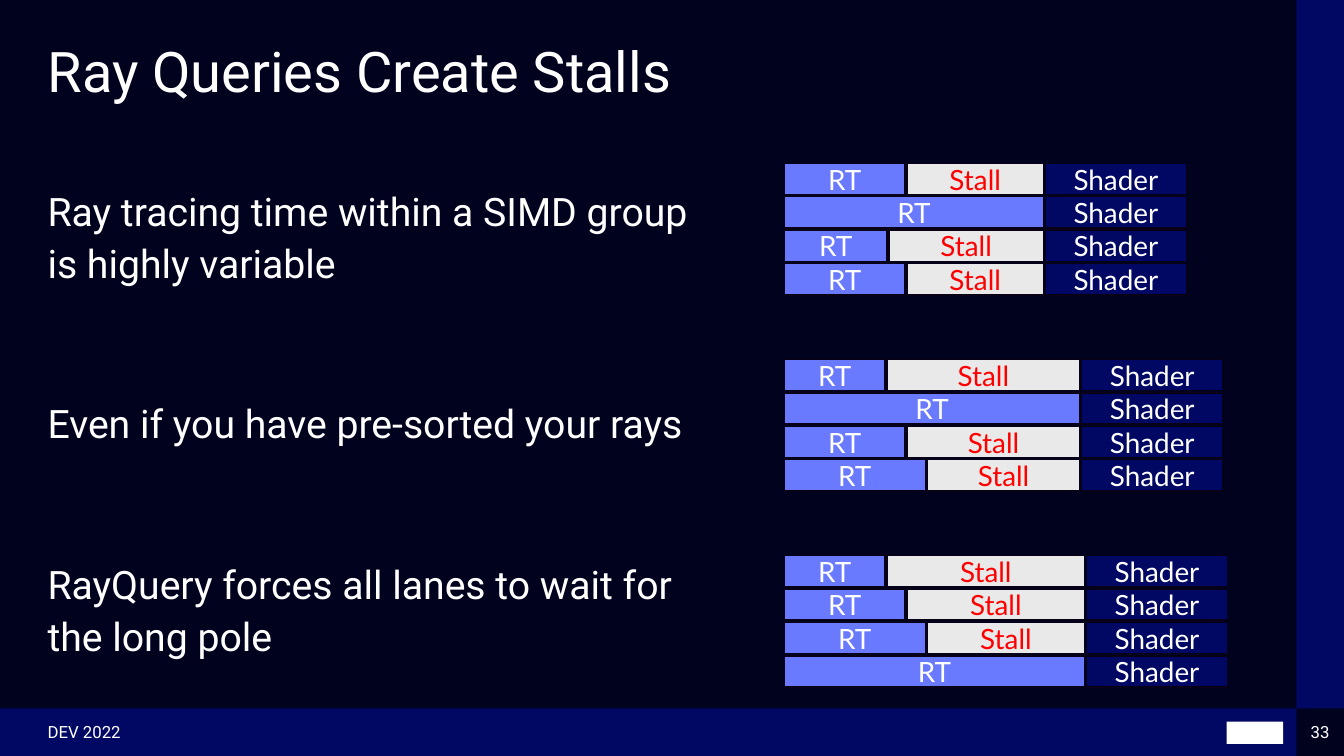
"""Builds the slide on stalls caused by ray queries."""
from typing import NamedTuple

from pptx import Presentation, util as u
from pptx.dml.color import RGBColor
from pptx.enum import shapes, text

NAVY, WHITE = "000864", "FFFFFF"
LEFT, ROW_STEP, ROW_HEIGHT, GAP = 560.2, 23.9, 22.3, 1.3
SHADER_WIDTH = 100.8
GROUP_TOP, GROUP_STEP = 116.6, 140.1
EDGE_X, EDGE_Y, EDGE = 926, 506, 34


class Box(NamedTuple):
    x: float
    y: float
    w: float
    h: float


class Style(NamedTuple):
    size: float
    font: str = "Roboto"
    color: str = WHITE
    align: text.PP_ALIGN = text.PP_ALIGN.LEFT
    anchor: text.MSO_ANCHOR = text.MSO_ANCHOR.MIDDLE


class Kind(NamedTuple):
    label: str
    fill: str
    color: str = WHITE


class Label(NamedTuple):
    lines: list[str]
    box: Box
    style: Style
    spacing: dict


class Group(NamedTuple):
    total: float
    rays: list[float]


RT = Kind("RT", "6A7AFF")
STALL = Kind("Stall", "E9E9E9", "FF0000")
SHADER = Kind("Shader", NAVY)

GROUPS = [
    Group(185.2, [86.4, 185.2, 73.4, 86.4]),
    Group(211.2, [72, 211.2, 86.4, 100.8]),
    Group(214.6, [72, 86.4, 100.8, 214.6]),
]
PANELS = [
    (Box(0, EDGE_Y, EDGE_X, EDGE), NAVY),
    (Box(EDGE_X, 0, EDGE, EDGE_Y), NAVY),
    (Box(876.2, 515.5, 40.3, 15.8), WHITE),
]
LABELS = [
    Label(["Ray Queries Create Stalls"], Box(34, 34, 857.5, 96.5),
          Style(40, anchor=text.MSO_ANCHOR.TOP), {"line_spacing": 0.83}),
    Label(["Ray tracing time within a SIMD group is highly variable",
           "Even if you have pre-sorted your rays",
           "RayQuery forces all lanes to wait for the long pole"],
          Box(34, 130.3, 463.7, 348.5), Style(28, anchor=text.MSO_ANCHOR.TOP),
          {"line_spacing": 1.1, "space_before": u.Pt(42), "space_after": u.Pt(36)}),
    Label(["DEV 2022"], Box(34, EDGE_Y, 253.4, EDGE), Style(12), {}),
    Label(["33"], Box(EDGE_X, EDGE_Y, EDGE, EDGE),
          Style(12, align=text.PP_ALIGN.CENTER), {}),
]


def rgb(value: str) -> RGBColor:
    """Turn a hex string into a colour."""
    return RGBColor.from_string(value)


def apply(target, values: dict) -> None:
    """Set each named attribute on the target."""
    for name, value in values.items():
        setattr(target, name, value)


def write(sp, lines: list[str], style: Style, spacing: dict) -> None:
    """Fill a shape with styled paragraphs."""
    tf = sp.text_frame
    apply(tf, {"word_wrap": True, "vertical_anchor": style.anchor,
               "margin_left": 0, "margin_right": 0,
               "margin_top": 0, "margin_bottom": 0})
    for i, line in enumerate(lines):
        p = tf.add_paragraph() if i else tf.paragraphs[0]
        apply(p, {"alignment": style.align, **spacing})
        r = p.add_run()
        r.text = line
        apply(r.font, {"size": u.Pt(style.size), "name": style.font})
        r.font.color.rgb = rgb(style.color)


def add_rect(s, box: Box, fill: str):
    """Add a plain rectangle without outline or shadow."""
    sp = s.shapes.add_shape(shapes.MSO_SHAPE.RECTANGLE, *map(u.Pt, box))
    sp.shadow.inherit = False
    sp.fill.solid()
    sp.fill.fore_color.rgb = rgb(fill)
    sp.line.fill.background()
    return sp


def add_bar(s, x: float, y: float, w: float, kind: Kind) -> None:
    """Add one labelled, outlined timeline bar."""
    sp = add_rect(s, Box(x, y, w, ROW_HEIGHT), kind.fill)
    sp.line.color.rgb = rgb("070017")
    sp.line.width = u.Pt(1)
    write(sp, [kind.label],
          Style(19.9, "Lato", kind.color, text.PP_ALIGN.CENTER), {})


def add_group(s, top: float, group: Group) -> None:
    """Add the lanes of one SIMD group."""
    for i, ray in enumerate(group.rays):
        y = top + i * ROW_STEP
        add_bar(s, LEFT, y, ray, RT)
        add_bar(s, LEFT + group.total + GAP, y, SHADER_WIDTH, SHADER)
        if ray < group.total:
            add_bar(s, LEFT + ray + GAP, y, group.total - ray - GAP, STALL)


def main() -> None:
    """Build and save the slide."""
    prs = Presentation()
    apply(prs, {"slide_width": u.Pt(960), "slide_height": u.Pt(540)})
    s = prs.slides.add_slide(prs.slide_layouts[6])
    s.background.fill.solid()
    s.background.fill.fore_color.rgb = rgb("00021E")
    for box, fill in PANELS:
        add_rect(s, box, fill)
    for label in LABELS:
        sp = s.shapes.add_textbox(*map(u.Pt, label.box))
        write(sp, label.lines, label.style, label.spacing)
    for i, group in enumerate(GROUPS):
        add_group(s, GROUP_TOP + i * GROUP_STEP, group)
    prs.save("out.pptx")


if __name__ == "__main__":
    main()
